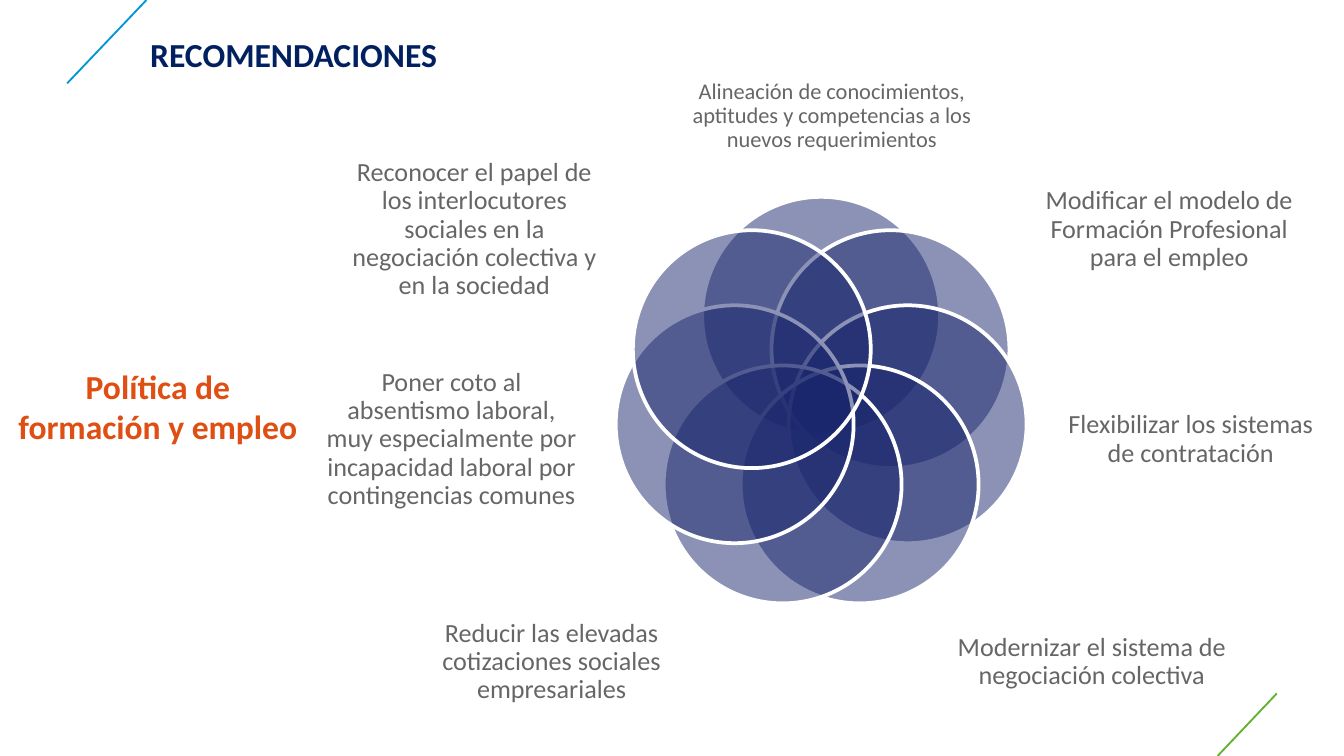
from math import cos, pi, sin

from lxml.etree import SubElement
from pptx import Presentation
from pptx.dml.color import RGBColor
from pptx.enum.shapes import MSO_CONNECTOR as Connector, MSO_SHAPE as Shape
from pptx.enum.text import MSO_ANCHOR as Anchor, MSO_AUTO_SIZE as AutoSize, PP_ALIGN as Align
from pptx.oxml.ns import qn
from pptx.util import Inches, Pt

WHITE = RGBColor(0xFF, 0xFF, 0xFF)
NAVY = RGBColor(0x00, 0x20, 0x60)
INDIGO = RGBColor(0x1A, 0x27, 0x6D)
GRAY = RGBColor(0x66, 0x66, 0x66)
ORANGE = RGBColor(0xDF, 0x4E, 0x13)
BLUE = RGBColor(0x00, 0x97, 0xD7)
GREEN = RGBColor(0x62, 0xB2, 0x2F)

SLIDE_WIDTH = 10
SLIDE_HEIGHT = SLIDE_WIDTH * 9 / 16
CENTER_X, CENTER_Y = 6.11, 3.01
RING_RADIUS = 0.66
DIAMETER = 1.77


def write(frame, text, size, color, bold=False):
    frame.word_wrap = True
    frame.auto_size = AutoSize.NONE
    para = frame.paragraphs[0]
    para.alignment = Align.CENTER
    span = para.add_run()
    span.text = text
    span.font.name = "Calibri"
    span.font.size = Pt(size)
    span.font.bold = bold
    span.font.color.rgb = color
    return para


deck = Presentation()
deck.slide_width, deck.slide_height = Inches(SLIDE_WIDTH), Inches(SLIDE_HEIGHT)
page = deck.slides.add_slide(deck.slide_layouts[5])

title = page.shapes.title
title.left, title.top = Inches(0.82), Inches(0.2)
title.width, title.height = Inches(2.73), Inches(0.5)
title.text_frame.vertical_anchor = Anchor.TOP
write(title.text_frame, "RECOMENDACIONES", 18, NAVY, True)

corner_lines = [
    (0.5, 0.62, 1.09, 0, BLUE),
    (9.06, SLIDE_HEIGHT, 9.5, 5.16, GREEN),
]
for x1, y1, x2, y2, color in corner_lines:
    line = page.shapes.add_connector(
        Connector.STRAIGHT, Inches(x1), Inches(y1), Inches(x2), Inches(y2))
    line.line.color.rgb = color
    line.line.width = Pt(1)
    SubElement(line._element.spPr, qn("a:effectLst"))

recommendations = [
    ("Alineación de conocimientos, aptitudes y competencias a los nuevos requerimientos",
     12, 4.97, 0.32, 2.44, 1.09),
    ("Modificar el modelo de Formación Profesional para el empleo",
     14, 7.74, 1.11, 1.92, 1.2),
    ("Flexibilizar los sistemas de contratación",
     14, 7.92, 2.63, 1.88, 1.28),
    ("Modernizar el sistema de negociación colectiva",
     14, 7.11, 4.34, 2.03, 1.17),
    ("Reducir las elevadas cotizaciones sociales empresariales",
     14, 3.09, 4.34, 2.03, 1.17),
    ("Poner coto al absentismo laboral, muy especialmente por incapacidad laboral "
     "por contingencias comunes",
     14, 2.42, 2.63, 1.88, 1.28),
    ("Reconocer el papel de los interlocutores sociales en la negociación colectiva "
     "y en la sociedad",
     14, 2.57, 1.11, 1.92, 1.2),
]
for index, (text, size, left, top, width, height) in enumerate(recommendations):
    angle = 2 * pi * index / len(recommendations)
    circle = page.shapes.add_shape(
        Shape.OVAL,
        Inches(CENTER_X + RING_RADIUS * sin(angle) - DIAMETER / 2),
        Inches(CENTER_Y - RING_RADIUS * cos(angle) - DIAMETER / 2),
        Inches(DIAMETER), Inches(DIAMETER))
    circle.shadow.inherit = False
    circle.fill.solid()
    circle.fill.fore_color.rgb = INDIGO
    fill_color = circle._element.spPr.find(qn("a:solidFill")).find(qn("a:srgbClr"))
    SubElement(fill_color, qn("a:alpha"), val="50000")
    circle.line.color.rgb = WHITE
    circle.line.width = Pt(2)

    box = page.shapes.add_textbox(Inches(left), Inches(top), Inches(width), Inches(height))
    frame = box.text_frame
    frame.margin_left = frame.margin_right = frame.margin_top = frame.margin_bottom = 0
    frame.vertical_anchor = Anchor.MIDDLE
    write(frame, text, size, GRAY).line_spacing = 0.9

topic = page.shapes.add_textbox(Inches(0), Inches(2.67), Inches(2.35), Inches(0.71))
write(topic.text_frame, "Política de formación y empleo", 18, ORANGE, True)

deck.save("out.pptx")
